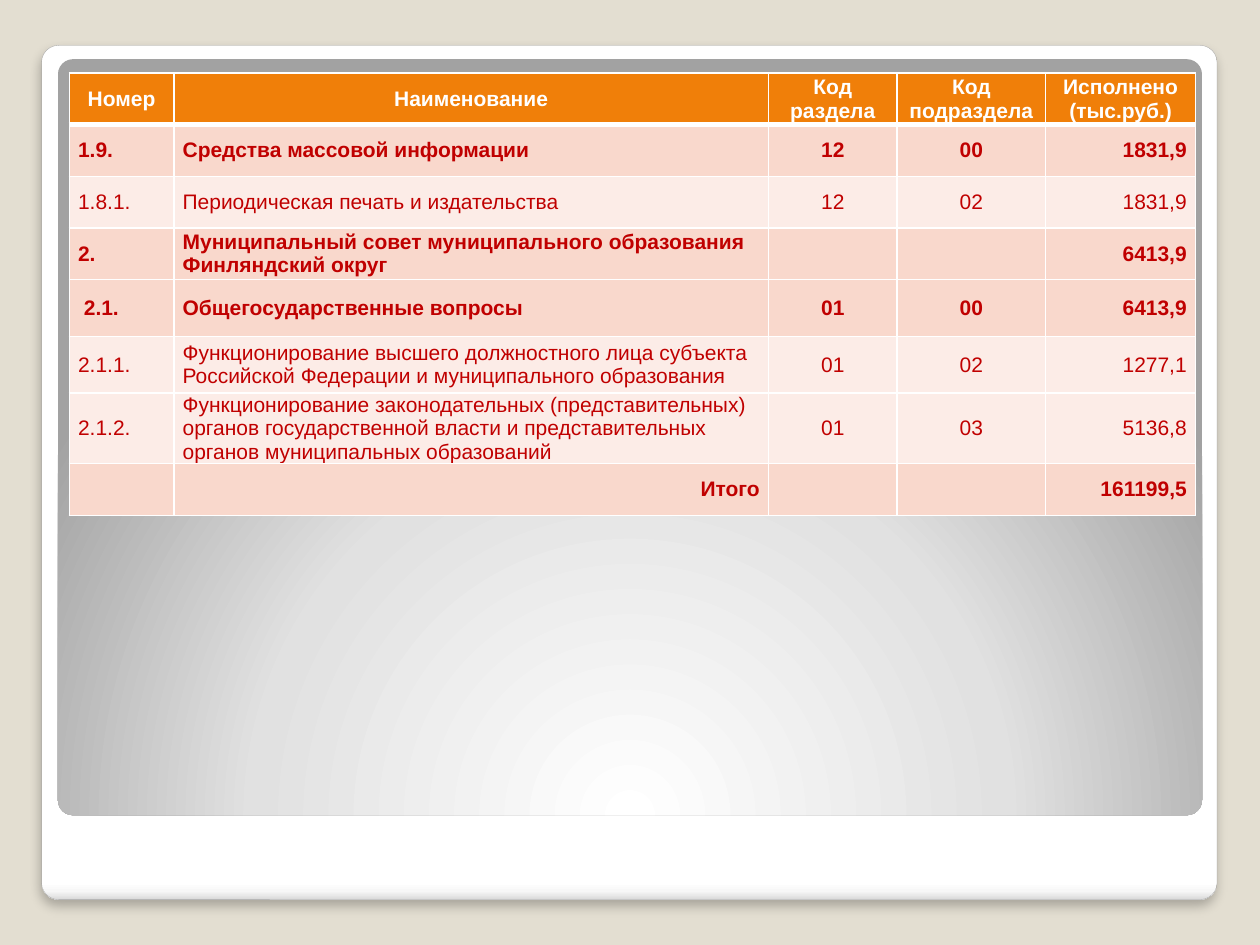
from lxml import etree
from pptx import Presentation
from pptx.dml.color import RGBColor
from pptx.enum.shapes import MSO_SHAPE
from pptx.enum.text import MSO_ANCHOR, PP_ALIGN
from pptx.oxml.ns import qn
from pptx.util import Inches, Pt

ROUNDED = MSO_SHAPE.ROUNDED_RECTANGLE
MIDDLE = MSO_ANCHOR.MIDDLE
LEFT, CENTER, RIGHT = PP_ALIGN.LEFT, PP_ALIGN.CENTER, PP_ALIGN.RIGHT

BACKGROUND = RGBColor(0xE3, 0xDE, 0xD1)
WHITE = RGBColor(0xFF, 0xFF, 0xFF)
BLACK = RGBColor(0x00, 0x00, 0x00)
FRAME_LINE = RGBColor(0xA4, 0xA4, 0xA4)
FRAME_SHADE = RGBColor(0xF7, 0xF7, 0xF7)
FRAME_EDGE = RGBColor(0xDA, 0xDA, 0xDA)
PANEL_MIDDLE = RGBColor(0xE1, 0xE1, 0xE1)
PANEL_EDGE = RGBColor(0xA2, 0xA2, 0xA2)
ORANGE = RGBColor(0xF0, 0x7F, 0x09)
DARK_RED = RGBColor(0xC0, 0x00, 0x00)
PINK = RGBColor(0xF9, 0xD8, 0xCC)
PALE_PINK = RGBColor(0xFC, 0xEC, 0xE7)

FONT = "Arial"
COLUMN_WIDTHS = [0.83, 4.72, 1.02, 1.18, 1.19]
ROW_HEIGHTS = [0.41, 0.41, 0.41, 0.41, 0.45, 0.45, 0.45, 0.41]
ALIGNMENTS = [LEFT, LEFT, CENTER, CENTER, RIGHT]
HEADINGS = ["Номер", "Наименование", "Код раздела", "Код\nподраздела",
            "Исполнено\n(тыс.руб.)"]
TOTAL = "Итого"

# Each budget line: is it a section heading, then its cells
BUDGET = [
    (True, ["1.9.", "Средства массовой информации", "12", "00", "1831,9"]),
    (False, ["1.8.1.", "Периодическая печать и издательства", "12", "02", "1831,9"]),
    (True, ["2.", "Муниципальный совет муниципального образования "
            "Финляндский округ", "", "", "6413,9"]),
    (True, [" 2.1.", "Общегосударственные вопросы", "01", "00", "6413,9"]),
    (False, ["2.1.1.", "Функционирование высшего должностного лица субъекта "
             "Российской Федерации и муниципального образования",
             "01", "02", "1277,1"]),
    (False, ["2.1.2.", "Функционирование законодательных (представительных) "
             "органов государственной власти и представительных органов "
             "муниципальных образований", "01", "03", "5136,8"]),
    (True, ["", TOTAL, "", "", "161199,5"]),
]


def add_element(parent, tag, **attributes):
    values = {name: str(value) for name, value in attributes.items()}
    return etree.SubElement(parent, qn(tag), values)


def add_rounded_panel(slide, left, top, width, height):
    panel = slide.shapes.add_shape(ROUNDED, Inches(left), Inches(top),
                                   Inches(width), Inches(height))
    panel.adjustments[0] = 0.02
    panel.shadow.inherit = False
    panel.line.fill.background()
    return panel


def start_gradient(shape, stops):
    """Give the shape gradient stops and return the element for its direction."""
    shape.fill.gradient()
    gradient = shape.element.spPr.find(qn("a:gradFill"))
    for child in list(gradient):
        gradient.remove(child)
    stop_list = add_element(gradient, "a:gsLst")
    for percent, color in stops:
        stop = add_element(stop_list, "a:gs", pos=percent * 1000)
        add_element(stop, "a:srgbClr", val=color)
    return gradient


def add_shadow(shape, color, opacity, blur, distance):
    effects = shape.element.spPr.find(qn("a:effectLst"))
    shadow = add_element(effects, "a:outerShdw", blurRad=Pt(blur),
                         dist=Pt(distance), dir=90 * 60000,
                         algn="t", rotWithShape=0)
    shade = add_element(shadow, "a:srgbClr", val=color)
    add_element(shade, "a:alpha", val=opacity * 1000)


def write_text(frame, text, size=12, color=DARK_RED, bold=False, align=LEFT):
    para = frame.paragraphs[0]
    para.alignment = align
    para.font.size = Pt(size)
    for number, line in enumerate(text.split("\n")):
        if number:
            para.add_line_break()
        if line:
            span = para.add_run()
            span.text = line
            span.font.name = FONT
            span.font.size = Pt(size)
            span.font.bold = bold
            span.font.color.rgb = color


def set_borders(cell, top=1, bottom=1):
    properties = cell._tc.get_or_add_tcPr()
    for tag, width in [("a:lnL", 1), ("a:lnR", 1), ("a:lnT", top), ("a:lnB", bottom)]:
        line = add_element(properties, tag, w=Pt(width))
        add_element(add_element(line, "a:solidFill"), "a:srgbClr", val=WHITE)


def format_cell(cell, fill, top=1, bottom=1):
    cell.margin_left = cell.margin_right = Inches(0.07)
    cell.margin_top = cell.margin_bottom = 0
    cell.vertical_anchor = MIDDLE
    set_borders(cell, top, bottom)
    cell.fill.solid()
    cell.fill.fore_color.rgb = fill


def add_budget_table(slide, left, top):
    frame = slide.shapes.add_table(
        len(ROW_HEIGHTS), len(COLUMN_WIDTHS), Inches(left), Inches(top),
        Inches(sum(COLUMN_WIDTHS)), Inches(sum(ROW_HEIGHTS)))
    table = frame.table
    table.horz_banding = False
    for column, width in zip(table.columns, COLUMN_WIDTHS):
        column.width = Inches(width)
    for row, height in zip(table.rows, ROW_HEIGHTS):
        row.height = Inches(height)

    # Header row
    for cell, heading in zip(table.rows[0].cells, HEADINGS):
        format_cell(cell, ORANGE, bottom=3)
        write_text(cell.text_frame, heading, color=WHITE, bold=True, align=CENTER)

    # Budget lines
    for number, (is_section, texts) in enumerate(BUDGET, start=1):
        fill = PINK if is_section else PALE_PINK
        for cell, text, align in zip(table.rows[number].cells, texts, ALIGNMENTS):
            format_cell(cell, fill, top=3 if number == 1 else 1)
            write_text(cell.text_frame, text, bold=is_section,
                       align=RIGHT if text == TOTAL else align)


def main():
    deck = Presentation()
    deck.slide_width, deck.slide_height = Inches(10), Inches(7.5)
    slide = deck.slides.add_slide(deck.slide_layouts[6])
    slide.background.fill.solid()
    slide.background.fill.fore_color.rgb = BACKGROUND

    # White frame with a soft shadow
    frame = add_rounded_panel(slide, 0.33, 0.36, 9.33, 6.78)
    frame.line.color.rgb = FRAME_LINE
    frame.line.width = Pt(0.16)
    gradient = start_gradient(frame, [(0, WHITE), (98, WHITE),
                                      (99, FRAME_SHADE), (100, FRAME_EDGE)])
    add_element(gradient, "a:lin", ang=90 * 60000, scaled=0)
    add_shadow(frame, BLACK, opacity=25, blur=6, distance=4)

    # Grey panel lit from below
    panel = add_rounded_panel(slide, 0.46, 0.47, 9.08, 6)
    gradient = start_gradient(panel, [(0, WHITE), (55, PANEL_MIDDLE),
                                      (100, PANEL_EDGE)])
    glow = add_element(gradient, "a:path", path="circle")
    add_element(glow, "a:fillToRect", l=50000, t=175000, r=50000, b=-75000)

    add_budget_table(slide, 0.55, 0.58)
    deck.save("out.pptx")


if __name__ == "__main__":
    main()
